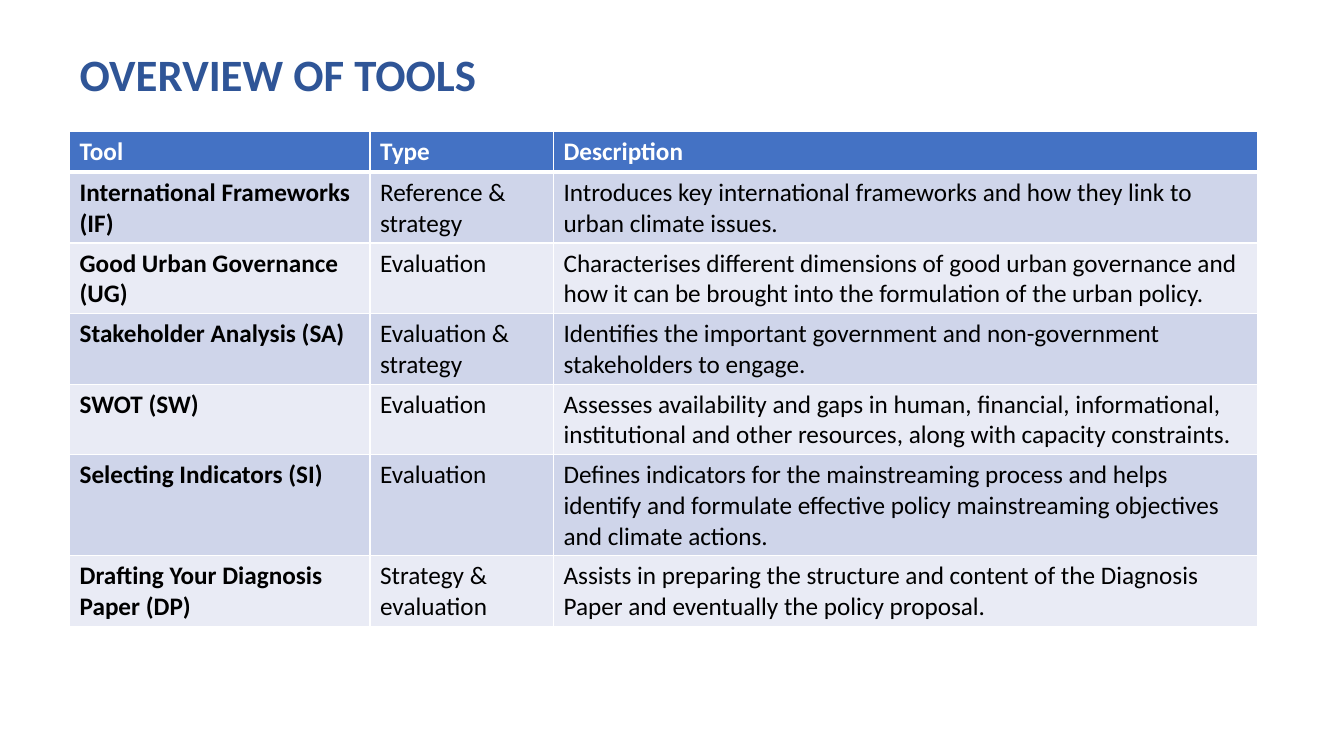
"""Build the slide that lists the tools with their type and description."""
from lxml.etree import SubElement
from pptx import Presentation
from pptx.dml.color import RGBColor
from pptx.enum.text import MSO_ANCHOR, MSO_AUTO_SIZE, PP_ALIGN
from pptx.oxml.ns import qn
from pptx.util import Pt

PX = 9144
FONT = "Calibri"
WHITE, BLACK, NAVY, BLUE = "FFFFFF", "000000", "2F5597", "4472C4"
BANDS = ["E9EBF5", "CFD5EA"]
WIDTHS = [298, 182, 698]
ROWS = [
    ("Tool", "Type", "Description"),
    ("International Frameworks (IF)", "Reference & strategy",
     "Introduces key international frameworks and how they link to urban climate issues."),
    ("Good Urban Governance (UG)", "Evaluation",
     "Characterises different dimensions of good urban governance and how it can be "
     "brought into the formulation of the urban policy."),
    ("Stakeholder Analysis (SA)", "Evaluation & strategy",
     "Identifies the important government and non-government stakeholders to engage."),
    ("SWOT (SW)", "Evaluation",
     "Assesses availability and gaps in human, financial, informational, institutional "
     "and other resources, along with capacity constraints."),
    ("Selecting Indicators (SI)", "Evaluation",
     "Defines indicators for the mainstreaming process and helps identify and formulate "
     "effective policy mainstreaming objectives and climate actions."),
    ("Drafting Your Diagnosis Paper (DP)", "Strategy & evaluation",
     "Assists in preparing the structure and content of the Diagnosis Paper and "
     "eventually the policy proposal."),
]


def paint(color, value):
    color.rgb = RGBColor.from_string(value)


def write(frame, text, size, color, bold):
    run = frame.paragraphs[0].add_run()
    run.text = text
    run.font.name = FONT
    run.font.size = Pt(size)
    run.font.bold = bold
    paint(run.font.color, color)


deck = Presentation()
deck.slide_width, deck.slide_height = 1333 * PX, 750 * PX
slide = deck.slides.add_slide(deck.slide_layouts[5])

title = slide.shapes.title
title.left, title.top, title.width, title.height = 69 * PX, 41 * PX, 655 * PX, 64 * PX
frame = title.text_frame
frame.word_wrap = True
frame.auto_size = MSO_AUTO_SIZE.SHAPE_TO_FIT_TEXT
frame.vertical_anchor = MSO_ANCHOR.TOP
frame.paragraphs[0].alignment = PP_ALIGN.LEFT
write(frame, "OVERVIEW OF TOOLS", 32, NAVY, True)

holder = slide.shapes.add_table(len(ROWS), len(WIDTHS), 69 * PX, 130 * PX, sum(WIDTHS) * PX, 491 * PX)
table = holder.table
for col, width in zip(table.columns, WIDTHS):
    col.width = width * PX
for row in table.rows:
    row.height = 41 * PX
holder.height = 491 * PX

for i, texts in enumerate(ROWS):
    head = i == 0
    for j, text in enumerate(texts):
        cell = table.cell(i, j)
        props = cell._tc.get_or_add_tcPr()
        for side in "LRTB":
            thick = (i, side) in [(0, "B"), (1, "T")]
            line = SubElement(props, qn(f"a:ln{side}"), w=str(Pt(3 if thick else 1)))
            fill = SubElement(line, qn("a:solidFill"))
            SubElement(fill, qn("a:srgbClr"), val=WHITE)
        cell.fill.solid()
        paint(cell.fill.fore_color, BLUE if head else BANDS[i % 2])
        write(cell.text_frame, text, 18, WHITE if head else BLACK, head or j == 0)

deck.save("out.pptx")
